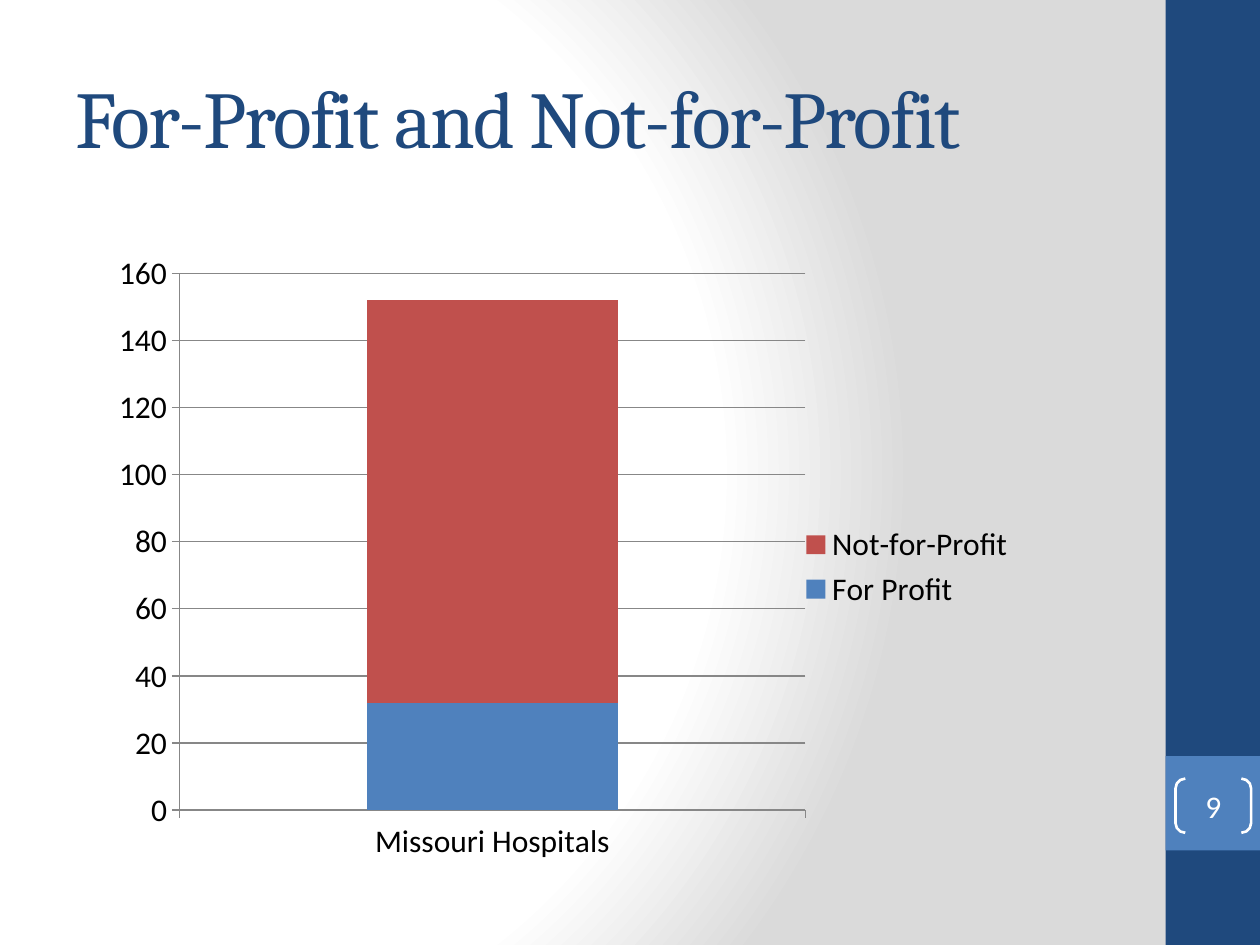
from pptx import Presentation
from pptx.chart.data import CategoryChartData as Data
from pptx.dml.color import RGBColor as RGB
from pptx.enum.chart import XL_CHART_TYPE as Kind, XL_LEGEND_POSITION as Side, XL_TICK_MARK as Tick
from pptx.enum.shapes import MSO_SHAPE as Form
from pptx.enum.text import MSO_ANCHOR as Anchor, PP_ALIGN as Align
from pptx.oxml import parse_xml
from pptx.oxml.ns import nsdecls
from pptx.util import Inches, Pt

TITLE = "For-Profit and Not-for-Profit"
PAGE = "9"
CATS = ["Missouri Hospitals"]
BARS = [("For Profit", [32], "blue"), ("Not-for-Profit", [120], "red")]

THEME = {
    "navy": "1F497D", "blue": "4F81BD", "red": "C0504D",
    "white": "FFFFFF", "black": "000000", "gray": "DADADA", "rule": "878787",
    "head": ("Cambria", 46), "body": ("Calibri", 18),
}
WIDE, HIGH = 10, 7.5
STRIP = 0.075
EDGE = 1 - STRIP
PLOT = {"x": 0.081, "y": 0.034, "w": 0.678, "h": 0.852}
STOPS = [(0, "white"), (75, "white"), (100, "gray")]


def tint(name):
    return RGB.from_string(THEME[name])


def place(x, y, w, h):
    return Inches(x * WIDE), Inches(y * HIGH), Inches(w * WIDE), Inches(h * HIGH)


def style(font, role, color):
    face, size = THEME[role]
    font.name, font.size = face, Pt(size)
    font.color.rgb = tint(color)


def write(shape, text, role, color, align):
    frame = shape.text_frame
    frame.word_wrap = True
    frame.vertical_anchor = Anchor.MIDDLE
    para = frame.paragraphs[0]
    para.alignment = align
    run = para.add_run()
    run.text = text
    style(run.font, role, color)
    return run


def block(slide, box, color):
    shape = slide.shapes.add_shape(Form.RECTANGLE, *place(*box))
    shape.shadow.inherit = False
    shape.fill.solid()
    shape.fill.fore_color.rgb = tint(color)
    shape.line.fill.background()


def shade(slide):
    stops = "".join(
        f'<a:gs pos="{at * 1000}"><a:srgbClr val="{THEME[name]}"/></a:gs>'
        for at, name in STOPS)
    slide.element.cSld.insert(0, parse_xml(
        f'<p:bg {nsdecls("p", "a")}><p:bgPr><a:gradFill rotWithShape="1">'
        f'<a:gsLst>{stops}</a:gsLst><a:path path="circle">'
        '<a:fillToRect l="20000" t="50000" r="100000" b="50000"/></a:path>'
        '</a:gradFill><a:effectLst/></p:bgPr></p:bg>'))


def rule(line):
    line.color.rgb = tint("rule")
    line.width = Pt(0.75)


def graph(slide):
    data = Data()
    data.categories = CATS
    for name, vals, _ in BARS:
        data.add_series(name, vals)
    box = place(0.083, 2 / HIGH, 0.733, 5 / HIGH)
    chart = slide.shapes.add_chart(Kind.COLUMN_STACKED, *box, data).chart
    style(chart.font, "body", "black")
    chart.has_title = False
    chart.has_legend = True
    chart.legend.position = Side.RIGHT
    chart.legend.include_in_layout = False
    plot = chart.plots[0]
    plot.gap_width, plot.overlap = 150, 100
    plot.vary_by_categories = False
    for bar, (_, _, color) in zip(plot.series, BARS):
        bar.format.fill.solid()
        bar.format.fill.fore_color.rgb = tint(color)
    for axis in (chart.category_axis, chart.value_axis):
        axis.major_tick_mark = Tick.OUTSIDE
        axis.minor_tick_mark = Tick.NONE
        rule(axis.format.line)
    values = chart.value_axis
    values.minimum_scale, values.maximum_scale, values.major_unit = 0, 160, 20
    values.has_major_gridlines = True
    rule(values.major_gridlines.format.line)
    area = chart.element.chart.plotArea
    for old in area.findall("c:layout", area.nsmap):
        area.remove(old)
    modes = "".join(f'<c:{k}Mode val="edge"/>' for k in "xy")
    sizes = "".join(f'<c:{k} val="{v}"/>' for k, v in PLOT.items())
    area.insert(0, parse_xml(
        f'<c:layout {nsdecls("c")}><c:manualLayout><c:layoutTarget val="inner"/>'
        f'{modes}{sizes}</c:manualLayout></c:layout>'))


def badge(slide):
    shape = slide.shapes.add_shape(
        Form.DOUBLE_BRACKET, *place(0.933, 6.18 / HIGH, 0.06, 0.43 / HIGH))
    shape.shadow.inherit = False
    shape.adjustments[0] = 0.18
    shape.fill.background()
    shape.line.color.rgb = tint("white")
    shape.line.width = Pt(1.5)
    frame = shape.text_frame
    frame.margin_left = frame.margin_right = frame.margin_top = frame.margin_bottom = 0
    write(shape, PAGE, "body", "white", Align.CENTER)


def main():
    deck = Presentation()
    deck.slide_width, deck.slide_height = Inches(WIDE), Inches(HIGH)
    slide = deck.slides.add_slide(deck.slide_layouts[6])
    shade(slide)
    block(slide, (EDGE, 0, STRIP, 1), "navy")
    block(slide, (EDGE, 0.8, STRIP, 0.1), "blue")
    title = slide.shapes.add_textbox(*place(0.05, 0.04, 0.833, 1.25 / HIGH))
    run = write(title, TITLE, "head", "navy", Align.LEFT)
    run.font._element.set("spc", "-100")
    graph(slide)
    badge(slide)
    deck.save("out.pptx")


if __name__ == "__main__":
    main()
